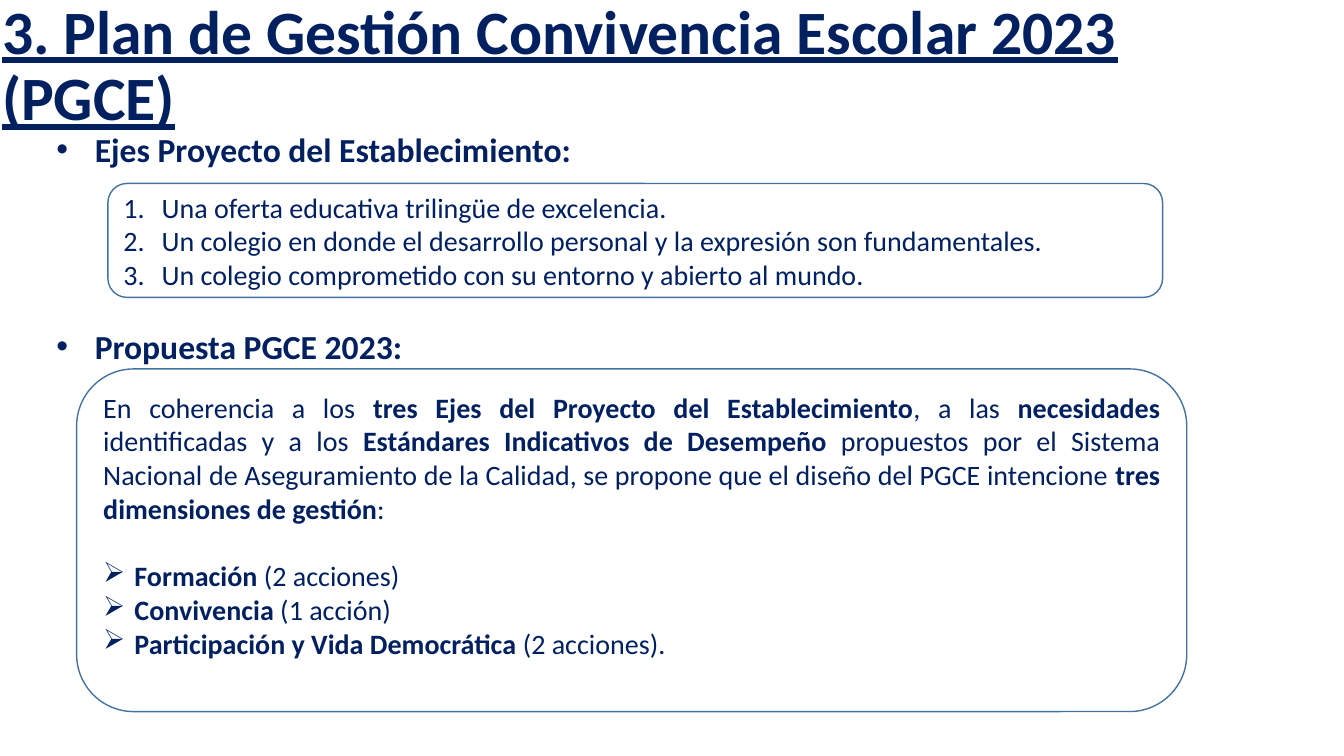
from dataclasses import dataclass

from lxml import etree
from pptx import Presentation
from pptx import util as u
from pptx.dml import color
from pptx.enum import shapes, text
from pptx.oxml import ns

SLIDE_WIDTH = u.Inches(13.33)
SLIDE_HEIGHT = u.Inches(7.5)


@dataclass(frozen=True)
class Theme:
    font: str = "Calibri"
    ink: color.RGBColor = color.RGBColor(0x00, 0x20, 0x60)
    paper: color.RGBColor = color.RGBColor(0xFF, 0xFF, 0xFF)
    outline: color.RGBColor = color.RGBColor(0x43, 0x73, 0x9E)
    title_size: int = 44
    heading_size: int = 24
    body_size: int = 20


THEME = Theme()


@dataclass(frozen=True)
class Area:
    """Percentages of the slide's width and height."""

    left: float
    top: float
    width: float
    height: float

    def place(self, box) -> None:
        box.left = round(SLIDE_WIDTH * self.left / 100)
        box.top = round(SLIDE_HEIGHT * self.top / 100)
        box.width = round(SLIDE_WIDTH * self.width / 100)
        box.height = round(SLIDE_HEIGHT * self.height / 100)


@dataclass(frozen=True)
class Marker:
    tag: str
    attribute: str
    value: str
    indent: float


DOT = Marker("a:buChar", "char", "•", 0.38)
ARROW = Marker("a:buChar", "char", "➢", 0.31)
NUMBER = Marker("a:buAutoNum", "type", "arabicPeriod", 0.38)


@dataclass(frozen=True)
class Span:
    text: str
    bold: bool = False


@dataclass(frozen=True)
class Line:
    spans: tuple[Span, ...]
    marker: Marker | None = None
    align: text.PP_ALIGN = text.PP_ALIGN.LEFT
    size: int = THEME.body_size
    space_before: float = 0
    line_spacing: float = 1.0
    underline: bool = False


@dataclass(frozen=True)
class Panel:
    area: Area
    lines: tuple[Line, ...]
    bottom_inset: float = 0.05


def heading(words: str) -> Line:
    return Line((Span(words, True),), DOT, size=THEME.heading_size)


def action(name: str, count: str, space_before: float = 0) -> Line:
    return Line((Span(name, True), Span(f" ({count}")), ARROW, space_before=space_before)


TITLE_AREA = Area(-0.6, -1.07, 95.1, 20)
TITLE = Line((Span("3. Plan de Gestión Convivencia Escolar 2023 (PGCE)", True),),
             size=THEME.title_size, line_spacing=0.9, underline=True)

HEADINGS = (
    (Area(3.45, 16.4, 87.1, 6.93), heading("Ejes Proyecto del Establecimiento:")),
    (Area(3.45, 42.4, 87.1, 6.93), heading("Propuesta PGCE 2023:")),
)

AXES = (
    "Una oferta educativa trilingüe de excelencia.",
    "Un colegio en donde el desarrollo personal y la expresión son fundamentales.",
    "Un colegio comprometido con su entorno y abierto al mundo.",
)

PROPOSAL = (
    Span("En coherencia a los "),
    Span("tres Ejes del Proyecto del Establecimiento", True),
    Span(", a las "),
    Span("necesidades ", True),
    Span("identificadas y a los "),
    Span("Estándares Indicativos de Desempeño ", True),
    Span("propuestos por el Sistema Nacional de Aseguramiento de la Calidad, "
         "se propone que el diseño del PGCE intencione "),
    Span("tres dimensiones de gestión", True),
    Span(":"),
)

PANELS = (
    Panel(Area(5.7, 48.8, 82.6, 45.33), (
        Line(PROPOSAL, align=text.PP_ALIGN.JUSTIFY),
        action("Formación", "2 acciones)", space_before=24.4),
        action("Convivencia", "1 acción)"),
        action("Participación y Vida Democrática", "2 acciones)."),
    ), bottom_inset=0.35),
    Panel(Area(8.03, 24.27, 78.47, 15.07),
          tuple(Line((Span(axis),), NUMBER) for axis in AXES)),
)


def set_marker(para, marker: Marker) -> None:
    properties = para._p.get_or_add_pPr()
    properties.set("marL", str(u.Inches(marker.indent)))
    properties.set("indent", str(-u.Inches(marker.indent)))
    bullet = etree.SubElement(properties, ns.qn(marker.tag))
    bullet.set(marker.attribute, marker.value)


def write(frame, lines: tuple[Line, ...], anchor: text.MSO_ANCHOR) -> None:
    frame.word_wrap = True
    frame.auto_size = text.MSO_AUTO_SIZE.NONE
    frame.vertical_anchor = anchor
    for index, line in enumerate(lines):
        para = frame.paragraphs[0] if index == 0 else frame.add_paragraph()
        if line.marker:
            set_marker(para, line.marker)
        para.alignment = line.align
        para.line_spacing = line.line_spacing
        para.space_before = u.Pt(line.space_before)
        para.font.name = THEME.font
        para.font.size = u.Pt(line.size)
        para.font.color.rgb = THEME.ink
        para.font.underline = line.underline
        for span in line.spans:
            run = para.add_run()
            run.text = span.text
            run.font.bold = span.bold


def draw_panel(page, panel: Panel) -> None:
    box = page.shapes.add_shape(shapes.MSO_SHAPE.ROUNDED_RECTANGLE, 0, 0, 0, 0)
    panel.area.place(box)
    box.shadow.inherit = False
    box.fill.solid()
    box.fill.fore_color.rgb = THEME.paper
    box.line.color.rgb = THEME.outline
    box.line.width = u.Pt(1)
    box.text_frame.margin_bottom = u.Inches(panel.bottom_inset)
    write(box.text_frame, panel.lines, text.MSO_ANCHOR.MIDDLE)


def main() -> None:
    deck = Presentation()
    deck.slide_width = SLIDE_WIDTH
    deck.slide_height = SLIDE_HEIGHT
    page = deck.slides.add_slide(deck.slide_layouts.get_by_name("Two Content"))
    title, *bodies = page.placeholders
    TITLE_AREA.place(title)
    write(title.text_frame, (TITLE,), text.MSO_ANCHOR.MIDDLE)
    for body, (area, line) in zip(bodies, HEADINGS):
        area.place(body)
        write(body.text_frame, (line,), text.MSO_ANCHOR.TOP)
    for panel in PANELS:
        draw_panel(page, panel)
    deck.save("out.pptx")


if __name__ == "__main__":
    main()
